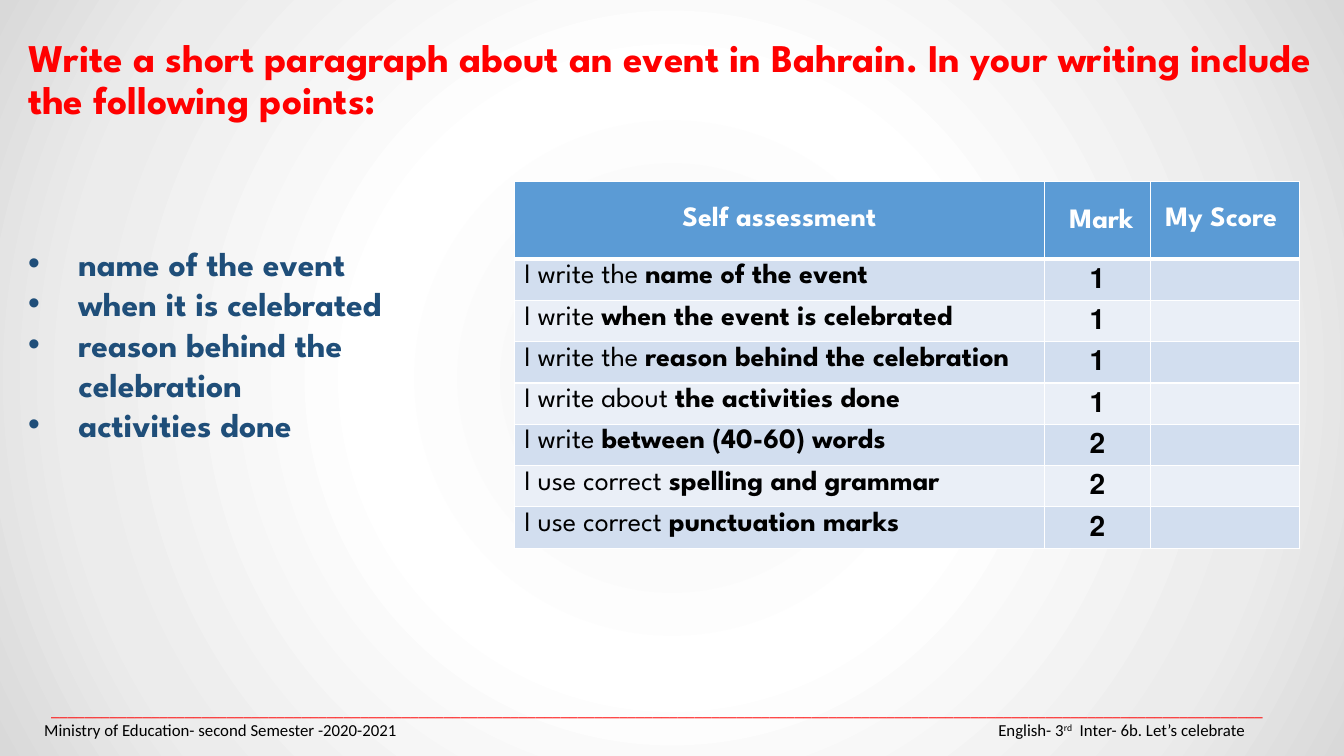
from lxml import etree
from pptx import Presentation
from pptx.dml.color import RGBColor
from pptx.enum.text import MSO_ANCHOR, PP_ALIGN
from pptx.oxml.ns import qn
from pptx.util import Inches, Pt

MIDDLE, TOP = MSO_ANCHOR.MIDDLE, MSO_ANCHOR.TOP
LEFT, CENTER = PP_ALIGN.LEFT, PP_ALIGN.CENTER

RED = RGBColor(0xFF, 0x00, 0x00)
NAVY = RGBColor(0x1F, 0x4E, 0x79)
BLUE = RGBColor(0x5B, 0x9B, 0xD5)
BANDS = (RGBColor(0xD2, 0xDE, 0xEF), RGBColor(0xEA, 0xEF, 0xF7))
WHITE = RGBColor(0xFF, 0xFF, 0xFF)
BLACK = RGBColor(0x00, 0x00, 0x00)
BACKDROP = ((0, "F2F2F2"), (39, "FFFFFF"), (78, "ECECEC"), (100, "D9D9D9"))
DISPLAY, PLAIN = "League Spartan", "Calibri"

# Content
TITLE = ("Write a short paragraph about an event in Bahrain. "
         "In your writing include the following points:")
POINTS = ["name of the event", "when it is celebrated",
          "reason behind the celebration", "activities done"]
HEADER = [" Self assessment ", "Mark ", "My Score "]
CRITERIA = [
    ("I write the ", "name of the event", 1),
    ("I write ", "when the event is celebrated", 1),
    ("I write the ", "reason behind the celebration", 1),
    ("I write about ", "the activities done", 1),
    ("I write ", "between (40-60) words", 2),
    ("I use correct ", "spelling and grammar", 2),
    ("I use correct ", "punctuation marks", 2),
]
FOOTER_RULE = "_" * 145
FOOTER = ["Ministry of Education- second Semester -2020-2021\tEnglish- 3",
          "rd", "  Inter- 6b. Let’s celebrate"]

# Layout, in inches
WIDTH, HEIGHT = 13.33, 7.5
MARGIN = 0.18
TABLE_LEFT, TABLE_TOP = 5.1, 1.8
COLUMNS = (5.26, 1.05, 1.48)
HEADER_ROW, ROW = 0.77, 0.41
CELL_TOP = 0.05
FOOTER_TAB = 11.91


def style(para, font, size, color, bold=False):
    para.font.name, para.font.size = font, Pt(size)
    para.font.color.rgb, para.font.bold = color, bold


def add_box(page, left, top, width, height, anchor=TOP):
    box = page.shapes.add_textbox(*map(Inches, (left, top, width, height)))
    box.text_frame.word_wrap = True
    box.text_frame.vertical_anchor = anchor
    return box.text_frame


def add_before_font(para, tag, **attributes):
    """Insert a paragraph property ahead of the default font."""
    properties = para._p.get_or_add_pPr()
    element = etree.Element(qn(tag), attributes)
    properties.find(qn("a:defRPr")).addprevious(element)
    return element


def set_borders(cell, top, bottom):
    properties = cell._tc.get_or_add_tcPr()
    sides = (("L", 1), ("R", 1), ("T", top), ("B", bottom))
    for index, (side, points) in enumerate(sides):
        line = etree.Element(qn(f"a:ln{side}"), w=str(Pt(points)))
        fill = etree.SubElement(line, qn("a:solidFill"))
        etree.SubElement(fill, qn("a:srgbClr"), val=str(WHITE))
        properties.insert(index, line)


def paint_backdrop(page):
    page.background.fill.gradient()
    gradient = next(page.element.iter(qn("a:gradFill")))
    for child in list(gradient):
        gradient.remove(child)
    stops = etree.SubElement(gradient, qn("a:gsLst"))
    for percent, color in BACKDROP:
        stop = etree.SubElement(stops, qn("a:gs"), pos=str(percent * 1000))
        etree.SubElement(stop, qn("a:srgbClr"), val=color)
    circle = etree.SubElement(gradient, qn("a:path"), path="circle")
    center = dict.fromkeys("ltrb", "50000")
    etree.SubElement(circle, qn("a:fillToRect"), center)


def add_title(page):
    para = add_box(page, MARGIN, 0.33, 12.94, 1.47).paragraphs[0]
    para.text = TITLE
    para.line_spacing, para.space_before = 0.9, Pt(10)
    style(para, DISPLAY, 28, RED, True)


def add_points(page):
    frame = add_box(page, MARGIN, 2.36, TABLE_LEFT - MARGIN, 2.12)
    for index, point in enumerate(POINTS):
        para = frame.add_paragraph() if index else frame.paragraphs[0]
        para.text = point
        style(para, DISPLAY, 24, NAVY, True)
        add_before_font(para, "a:buFont", typeface="Arial")
        add_before_font(para, "a:buChar", char="•")
        properties = para._p.get_or_add_pPr()
        properties.set("marL", str(Inches(0.5)))
        properties.set("indent", str(-Inches(0.5)))


def add_assessment(page):
    rows = [[(text,) for text in HEADER]]
    rows += [[(lead, key), (str(mark),), ()] for lead, key, mark in CRITERIA]
    heights = [HEADER_ROW] + [ROW] * len(CRITERIA)
    table = page.shapes.add_table(
        len(rows), len(COLUMNS), Inches(TABLE_LEFT), Inches(TABLE_TOP),
        Inches(sum(COLUMNS)), Inches(sum(heights))).table
    for column, width in zip(table.columns, COLUMNS):
        column.width = Inches(width)
    for r, (row, height) in enumerate(zip(rows, heights)):
        table.rows[r].height = Inches(height)
        for c, spans in enumerate(row):
            cell = table.cell(r, c)
            is_criterion = r > 0 and c == 0
            cell.fill.solid()
            cell.fill.fore_color.rgb = BANDS[(r - 1) % 2] if r else BLUE
            cell.vertical_anchor = TOP if is_criterion else MIDDLE
            cell.margin_top = Inches(CELL_TOP if is_criterion else 0)
            cell.margin_bottom = 0
            set_borders(cell, 3 if r == 1 else 1, 1 if r else 3)
            para = cell.text_frame.paragraphs[0]
            para.alignment = LEFT if is_criterion else CENTER
            style(para, DISPLAY, 20, BLACK if r else WHITE, True)
            if c == 1:  # marks read from right to left
                para._p.get_or_add_pPr().set("rtl", "1")
            for index, text in enumerate(spans):
                span = para.add_run()
                span.text = text
                span.font.bold = not is_criterion or index == 1


def add_footer(page):
    frame = add_box(page, 0.34, 6.94, 12.37, 0.4, MIDDLE)
    rule = frame.paragraphs[0]
    rule.text, rule.alignment = FOOTER_RULE, CENTER
    style(rule, PLAIN, 12, RED)

    para = frame.add_paragraph()
    style(para, PLAIN, 12, BLACK)
    tabs = add_before_font(para, "a:tabLst")
    etree.SubElement(tabs, qn("a:tab"), pos=str(Inches(FOOTER_TAB)), algn="r")
    for text in FOOTER:
        span = para.add_run()
        span.text = text
        if text == "rd":
            span.font._element.set("baseline", "30000")


def main():
    deck = Presentation()
    deck.slide_width, deck.slide_height = Inches(WIDTH), Inches(HEIGHT)
    page = deck.slides.add_slide(deck.slide_layouts[6])
    paint_backdrop(page)
    add_title(page)
    add_assessment(page)
    add_footer(page)
    add_points(page)
    deck.save("out.pptx")


if __name__ == "__main__":
    main()
